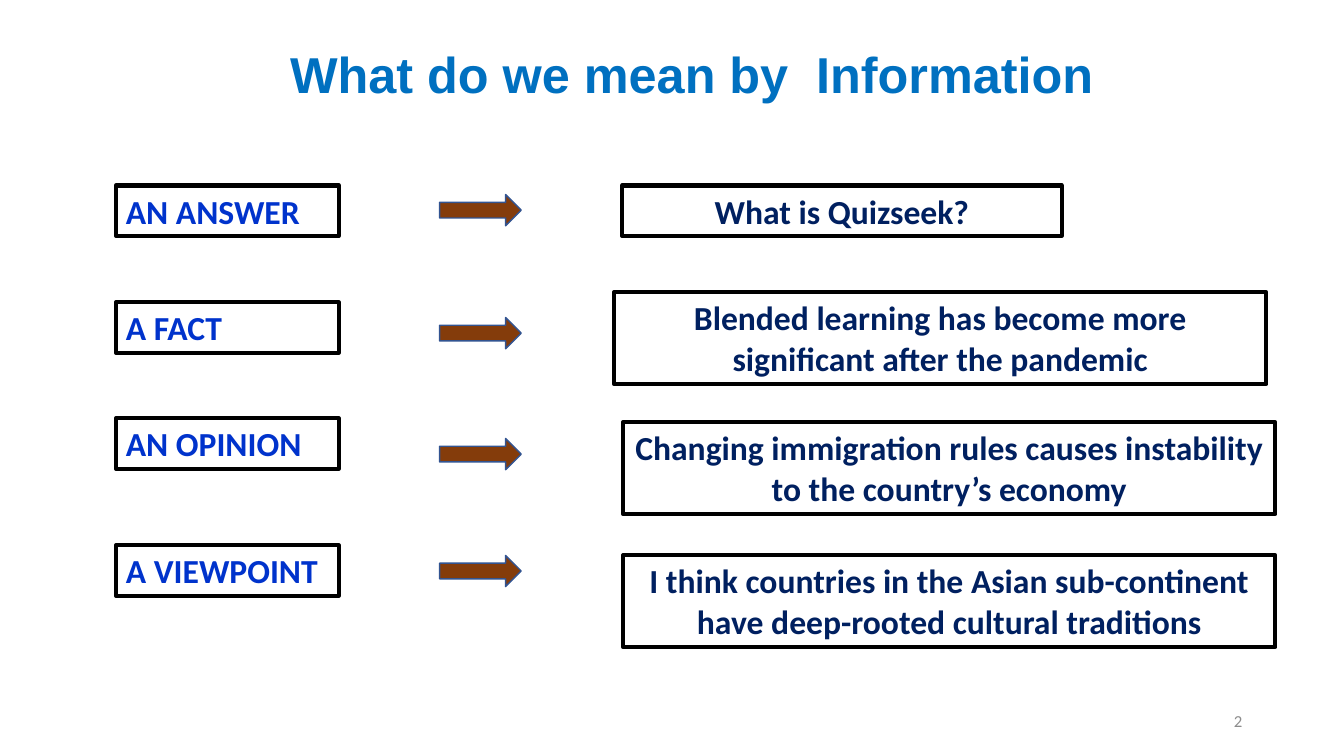
from pptx import Presentation
from pptx.dml.color import RGBColor
from pptx.enum.shapes import MSO_SHAPE
from pptx.enum.text import MSO_ANCHOR, PP_ALIGN
from pptx.util import Inches, Pt

RECTANGLE, ARROW = MSO_SHAPE.RECTANGLE, MSO_SHAPE.RIGHT_ARROW
LEFT, CENTER, RIGHT = PP_ALIGN.LEFT, PP_ALIGN.CENTER, PP_ALIGN.RIGHT
TOP, MIDDLE = MSO_ANCHOR.TOP, MSO_ANCHOR.MIDDLE

BLACK, BROWN, ARROW_EDGE = "000000", "843C0B", "325491"
TITLE_BLUE, KIND_BLUE, EXAMPLE_NAVY, NUMBER_GREY = "0070C0", "0033CC", "002060", "8C8C8C"

TITLE_FONT = {"name": "Arial", "size": Pt(36), "bold": True}
BOX_FONT = {"name": "Calibri", "size": Pt(24), "bold": True}
NUMBER_FONT = {"name": "Calibri", "size": Pt(12), "bold": False}

KIND_LEFT, KIND_WIDTH, LINE_HEIGHT = 1.15, 2.21, 0.5
ARROW_LEFT, ARROW_WIDTH, ARROW_HEIGHT = 4.36, 0.81, 0.31

# Kind, its top, arrow top, example, example box
ROWS = [
    ("AN ANSWER", 1.84, 1.93, "What is Quizseek?",
     (6.17, 1.84, 4.36, LINE_HEIGHT)),
    ("A FACT", 3.0, 3.15,
     "Blended learning has become more significant after the pandemic",
     (6.09, 2.9, 6.47, 0.91)),
    ("AN OPINION", 4.15, 4.35,
     "Changing immigration rules causes instability to the country’s economy",
     (6.18, 4.19, 6.47, 0.91)),
    ("A VIEWPOINT", 5.41, 5.51,
     "I think countries in the Asian sub-continent have deep-rooted cultural traditions",
     (6.18, 5.51, 6.47, 0.91)),
]


def rgb(color):
    return RGBColor.from_string(color)


def write(shape, text, color, font_format, align=LEFT, anchor=TOP):
    frame = shape.text_frame
    frame.word_wrap = True
    frame.vertical_anchor = anchor
    paragraph = frame.paragraphs[0]
    paragraph.alignment = align
    run = paragraph.add_run()
    run.text = text
    for attribute, value in font_format.items():
        setattr(run.font, attribute, value)
    run.font.color.rgb = rgb(color)


def add_label(slide, place, *text_format):
    label = slide.shapes.add_textbox(*map(Inches, place))
    write(label, *text_format)


def add_outlined(slide, preset, place, edge, weight):
    shape = slide.shapes.add_shape(preset, *map(Inches, place))
    shape.shadow.inherit = False
    shape.line.color.rgb = rgb(edge)
    shape.line.width = Pt(weight)
    return shape


def add_box(slide, place, text, color, align):
    box = add_outlined(slide, RECTANGLE, place, BLACK, 3)
    box.fill.background()
    write(box, text, color, BOX_FONT, align)


def add_arrow(slide, top):
    place = (ARROW_LEFT, top, ARROW_WIDTH, ARROW_HEIGHT)
    arrow = add_outlined(slide, ARROW, place, ARROW_EDGE, 1)
    arrow.fill.solid()
    arrow.fill.fore_color.rgb = rgb(BROWN)


def main():
    deck = Presentation()
    deck.slide_width, deck.slide_height = Inches(13.33), Inches(7.5)
    slide = deck.slides.add_slide(deck.slide_layouts[6])

    # Title and slide number
    add_label(slide, (2.78, 0.38, 9.03, 1.08), "What do we mean by  Information",
              TITLE_BLUE, TITLE_FONT)
    add_label(slide, (9.42, 6.95, 3, 0.4), "2", NUMBER_GREY, NUMBER_FONT, RIGHT, MIDDLE)

    # Each kind of information points to its example
    for kind, kind_top, arrow_top, example, example_place in ROWS:
        kind_place = (KIND_LEFT, kind_top, KIND_WIDTH, LINE_HEIGHT)
        add_box(slide, kind_place, kind, KIND_BLUE, LEFT)
        add_arrow(slide, arrow_top)
        add_box(slide, example_place, example, EXAMPLE_NAVY, CENTER)

    deck.save("out.pptx")


if __name__ == "__main__":
    main()
